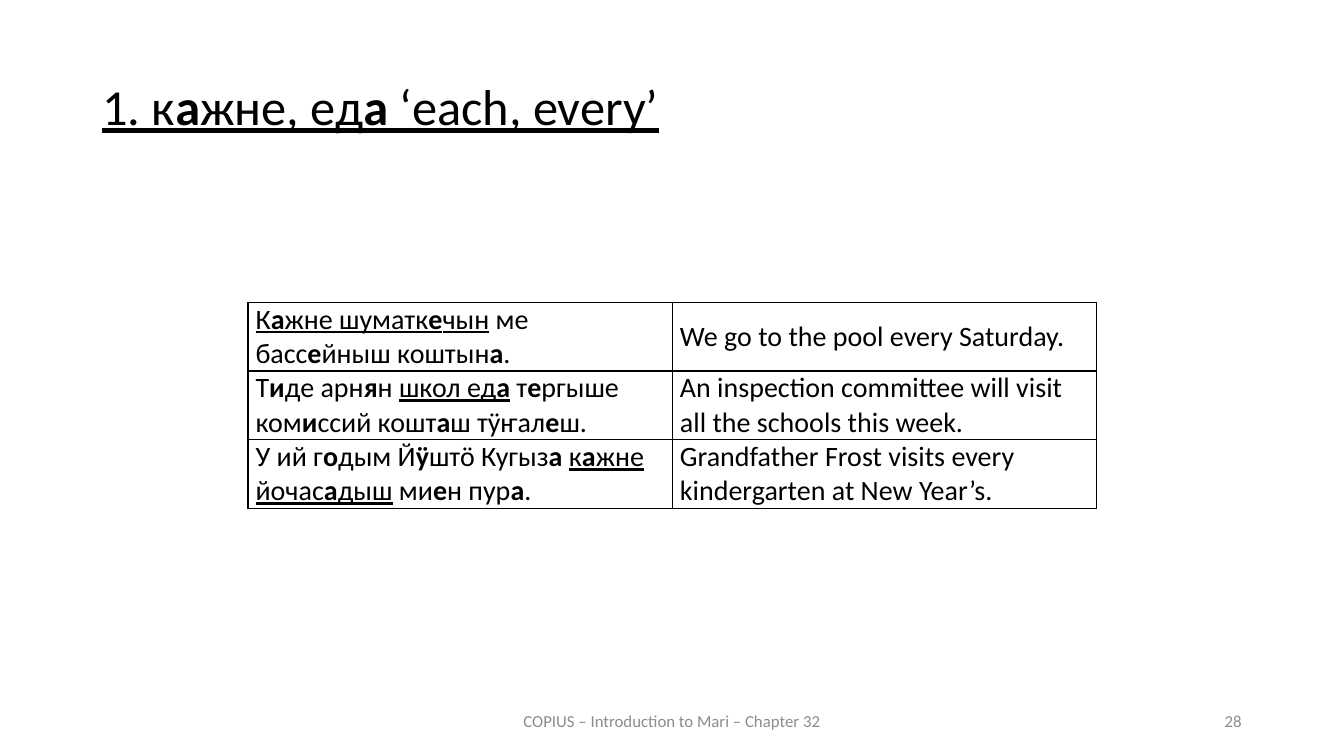
from dataclasses import dataclass
from lxml.etree import SubElement as Sub
from pptx import Presentation
from pptx.dml.color import RGBColor as Rgb
from pptx.enum.text import MSO_ANCHOR as Anchor, PP_ALIGN as Align
from pptx.oxml.ns import qn
from pptx.util import Cm, Pt


@dataclass(frozen=True)
class Theme:
    """Hold the colours and type sizes."""
    font: str = "Calibri"
    ink: str = "000000"
    gray: str = "8C8C8C"
    head: int = 36
    body: int = 20
    foot: int = 12
    rule: int = 1


THEME = Theme()
TITLE = "_1. к*а*жне, ед*а* ‘each, every’_"
ROWS = [
    ("_К*а*жне шуматк*е*чын_ ме басс*е*йныш коштын*а*.",
     "We go to the pool every Saturday."),
    ("Т*и*де арн*я*н _школ ед*а*_ т*е*ргыше ком*и*ссий кошт*а*ш тӱҥал*е*ш.",
     "An inspection committee will visit all the schools this week."),
    ("У ий г*о*дым Й*ӱ*штӧ Кугыз*а *_к*а*жне йочас*а*дыш_ ми*е*н пур*а*.",
     "Grandfather Frost visits every kindergarten at New Year’s."),
]
FOOT = "COPIUS – Introduction to Mari – Chapter 32"


def write(frame, text, size, color, align=Align.LEFT):
    """Write text in which * toggles bold and _ toggles underline."""
    frame.word_wrap = True
    para = frame.paragraphs[0]
    para.alignment = align
    font = para.font
    font.name, font.size = THEME.font, Pt(size)
    font.color.rgb = Rgb.from_string(color)
    bold = False
    for i, part in enumerate(text.split("_")):
        for j, piece in enumerate(part.split("*")):
            bold = bold != (j > 0)
            if piece:
                run = para.add_run()
                run.text = piece
                if bold:
                    run.font.bold = True
                if i % 2:
                    run.font.underline = True
    return para


def add_title(slide, box):
    """Place the underlined title."""
    frame = slide.shapes.add_textbox(*box).text_frame
    para = write(frame, TITLE, THEME.head, THEME.ink, Align.JUSTIFY)
    para.line_spacing = 0.9


def add_foot(slide, box):
    """Place the course name mid-slide and the page number at the right."""
    left, top, width, height = box
    parts = [(FOOT, 0, Cm(11.43), Align.CENTER),
             ("28", width - Cm(7.62), Cm(7.62), Align.RIGHT)]
    for text, shift, wide, align in parts:
        frame = slide.shapes.add_textbox(left + shift, top, wide, height).text_frame
        frame.vertical_anchor = Anchor.MIDDLE
        write(frame, text, THEME.foot, THEME.gray, align)


def add_edges(cell):
    """Draw a thin line on each side of a cell."""
    props = cell._tc.get_or_add_tcPr()
    for side in "LRTB":
        line = Sub(props, qn(f"a:ln{side}"), w=str(Pt(THEME.rule)))
        Sub(Sub(line, qn("a:solidFill")), qn("a:srgbClr"), val=THEME.ink)


def add_grid(slide, box):
    """Place the table of sentences and their translations."""
    table = slide.shapes.add_table(len(ROWS), len(ROWS[0]), *box).table
    table.first_row = table.horz_banding = False
    for r, row in enumerate(ROWS):
        for c, text in enumerate(row):
            cell = table.cell(r, c)
            cell.margin_left = cell.margin_right = Cm(0.19)
            cell.margin_top = cell.margin_bottom = 0
            cell.vertical_anchor = Anchor.MIDDLE
            add_edges(cell)
            cell.fill.background()
            write(cell.text_frame, text, THEME.body, THEME.ink)


def main():
    """Build the slide and save it."""
    deck = Presentation()
    deck.slide_width, deck.slide_height = Cm(33.87), Cm(19.05)
    slide = deck.slides.add_slide(deck.slide_layouts[6])
    add_title(slide, (Cm(2.33), Cm(1.93), Cm(29.21), Cm(2.11)))
    add_grid(slide, (Cm(6.25), Cm(7.62), Cm(21.39), Cm(5.19)))
    add_foot(slide, (Cm(11.22), Cm(17.66), Cm(20.32), Cm(1.01)))
    deck.save("out.pptx")


if __name__ == "__main__":
    main()
